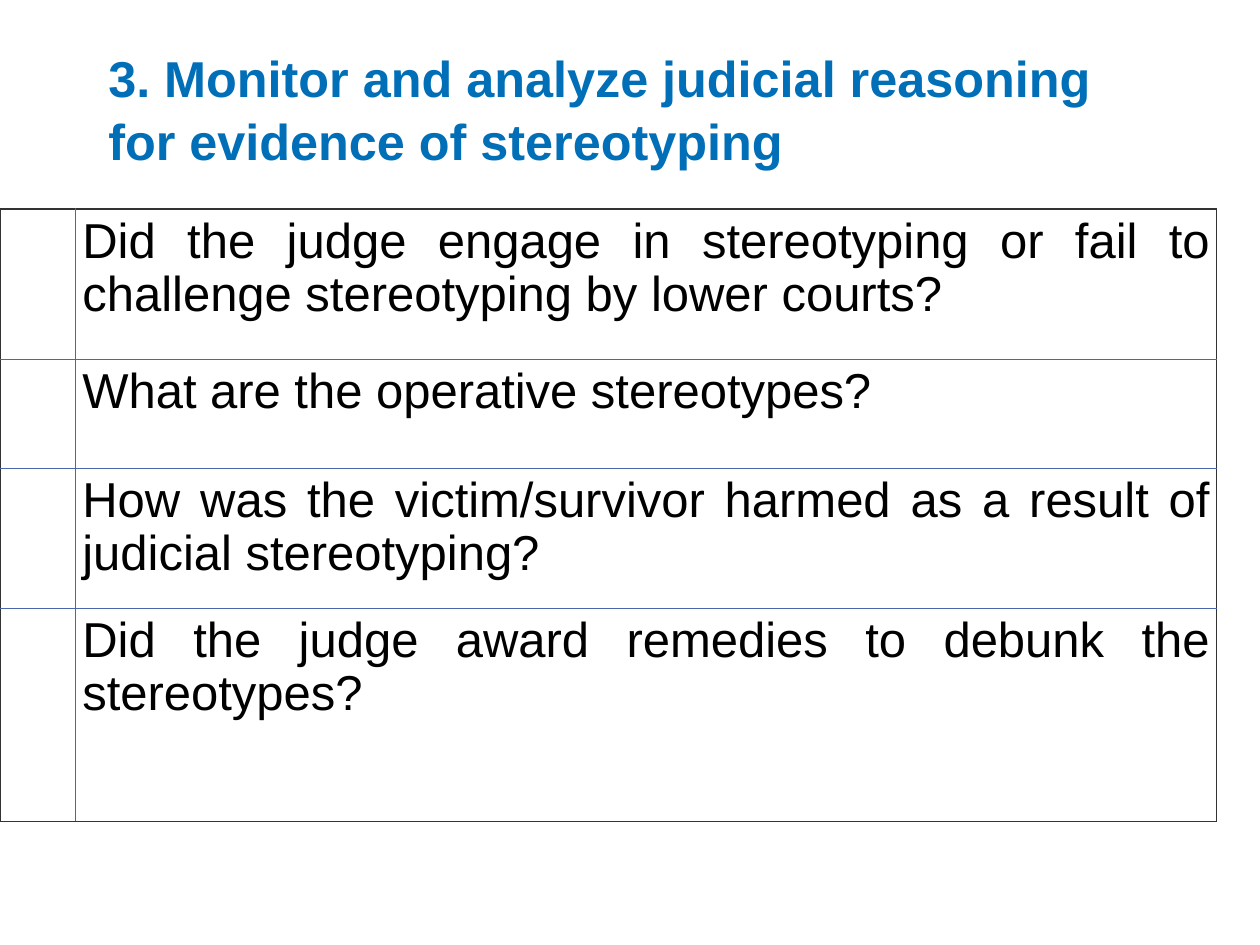
import pptx
import pptx.dml.color
import pptx.enum.text
import pptx.oxml
import pptx.oxml.ns
import pptx.util

Pt = pptx.util.Pt
FONT = "Arial"
COLORS = {"title": "006FB7", "text": "000000", "paper": "FFFFFF",
          "frame": "333333", "divider": "666666", "accent": "4A66AC"}
TITLE = "3. Monitor and analyze judicial reasoning for evidence of stereotyping"
# question, row height, colour of the line below
QUESTIONS = [
    ("Did the judge engage in stereotyping or fail to challenge stereotyping "
     "by lower courts?", 85.9, "divider"),
    ("What are the operative stereotypes?", 62.4, "accent"),
    ("How was the victim/survivor harmed as a result of judicial stereotyping?",
     80, "accent"),
    ("Did the judge award remedies to debunk the stereotypes?", 121.7, "frame"),
]
COLUMN_WIDTHS = (43, 652.3)


def rgb(name):
    return pptx.dml.color.RGBColor.from_string(COLORS[name])


def set_text(text_frame, text, size, color, line_spacing, bold=False):
    text_frame.text = text
    paragraph = text_frame.paragraphs[0]
    paragraph.line_spacing = line_spacing
    font = paragraph.runs[0].font
    font.name = FONT
    font.size = Pt(size)
    font.bold = bold
    font.color.rgb = rgb(color)
    return paragraph


def set_borders(cell, borders):
    """Draw the sides given as {side: (colour name, width)}."""
    properties = cell._tc.get_or_add_tcPr()
    for index, side in enumerate(side for side in "LRTB" if side in borders):
        color, width = borders[side]
        line = pptx.oxml.parse_xml(
            f'<a:ln{side} {pptx.oxml.ns.nsdecls("a")} w="{Pt(width)}">'
            f'<a:solidFill><a:srgbClr val="{COLORS[color]}"/></a:solidFill>'
            f'</a:ln{side}>')
        properties.insert(index, line)


def add_title(slide, left, top, width, height):
    text_frame = slide.shapes.add_textbox(
        Pt(left), Pt(top), Pt(width), Pt(height)).text_frame
    text_frame.word_wrap = True
    text_frame.vertical_anchor = pptx.enum.text.MSO_ANCHOR.TOP
    text_frame.margin_left = text_frame.margin_right = Pt(3.6)
    text_frame.margin_top = text_frame.margin_bottom = Pt(3.6)
    set_text(text_frame, TITLE, 28.8, "title", 1.05, bold=True)


def add_question_table(slide, left, top):
    heights = [height for _, height, _ in QUESTIONS]
    table = slide.shapes.add_table(
        len(QUESTIONS), len(COLUMN_WIDTHS), Pt(left), Pt(top),
        Pt(sum(COLUMN_WIDTHS)), Pt(sum(heights))).table
    table.first_row = table.horz_banding = False
    for column, width in zip(table.columns, COLUMN_WIDTHS):
        column.width = Pt(width)

    line_above = ("frame", 1)
    for row, (question, height, line_color) in zip(table.rows, QUESTIONS):
        row.height = Pt(height)
        line_below = (line_color, 0.5)
        sides = ("frame", "divider", "frame")
        for index, cell in enumerate(row.cells):
            cell.margin_left = cell.margin_right = Pt(4.1)
            cell.margin_top = cell.margin_bottom = Pt(4.1)
            cell.fill.solid()
            cell.fill.fore_color.rgb = rgb("paper")
            set_borders(cell, {"L": (sides[index], 0.5),
                               "R": (sides[index + 1], 0.5),
                               "T": line_above, "B": line_below})
        paragraph = set_text(row.cells[1].text_frame, question, 28, "text", 0.97)
        paragraph.alignment = pptx.enum.text.PP_ALIGN.JUSTIFY
        line_above = line_below


def main():
    presentation = pptx.Presentation()
    presentation.slide_width = Pt(720)
    presentation.slide_height = Pt(540)
    slide = presentation.slides.add_slide(presentation.slide_layouts[6])
    add_title(slide, 58.3, 21.6, 595.4, 85.7)
    add_question_table(slide, 0, 119.4)
    presentation.save("out.pptx")


if __name__ == "__main__":
    main()
